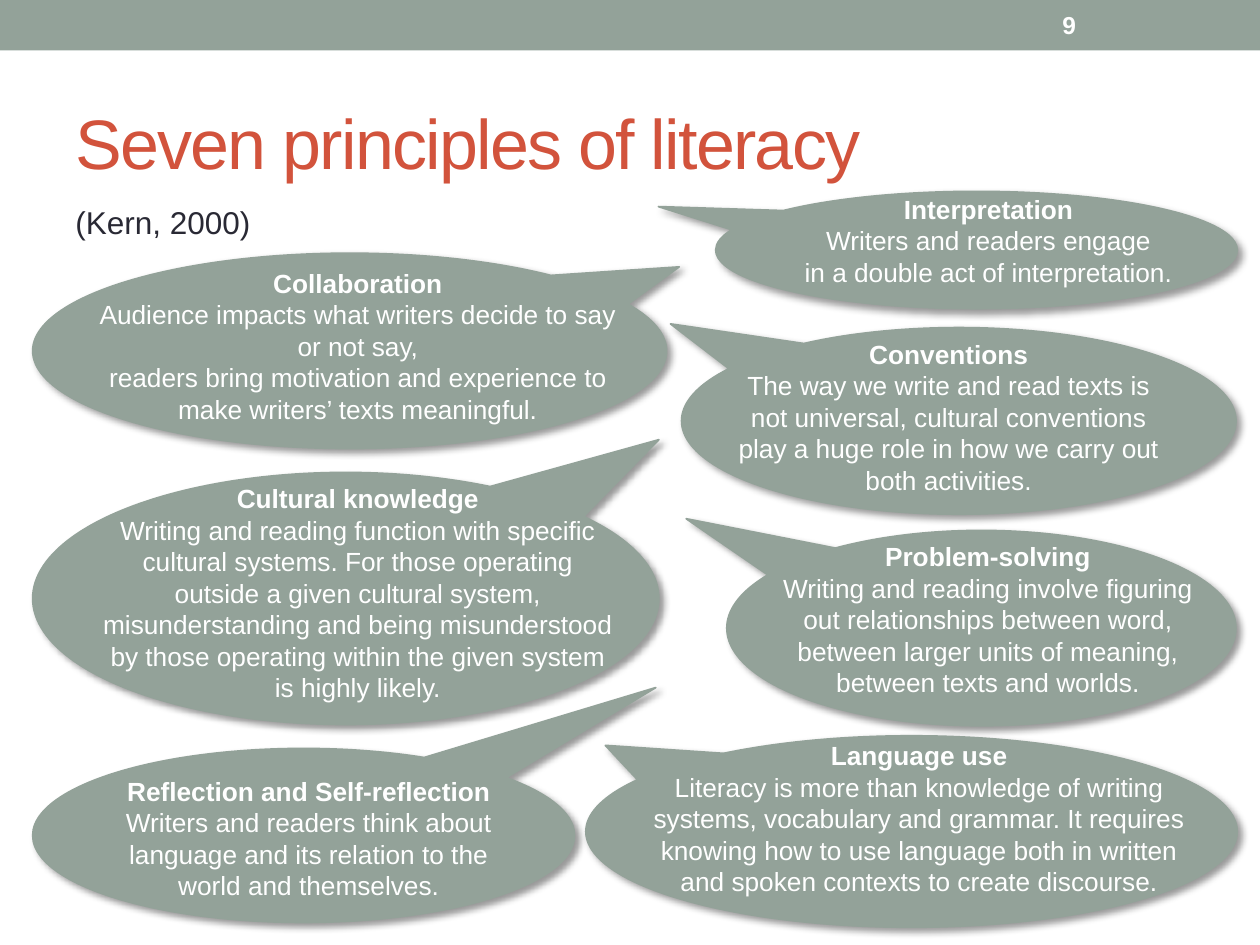
from lxml import etree
from pptx import Presentation
from pptx.dml.color import RGBColor
from pptx.enum.shapes import MSO_SHAPE
from pptx.enum.text import MSO_ANCHOR, PP_ALIGN
from pptx.oxml.ns import qn
from pptx.util import Pt

RECTANGLE = MSO_SHAPE.RECTANGLE
CALLOUT = MSO_SHAPE.OVAL_CALLOUT
TOP, MIDDLE = MSO_ANCHOR.TOP, MSO_ANCHOR.MIDDLE
LEFT, CENTER = PP_ALIGN.LEFT, PP_ALIGN.CENTER
SAGE, RUST, INK, WHITE = "93A299", "D2533C", "292934", "FFFFFF"


def color(value):
    return RGBColor.from_string(value)


class SlideWriter:
    font = "Arial"
    principle_size = 15
    principle_margin = 2.88

    def __init__(self, slide):
        self.slide = slide

    def shape(self, preset, box):
        shape = self.slide.shapes.add_shape(preset, *map(Pt, box))
        shape.shadow.inherit = False
        shape.fill.solid()
        shape.fill.fore_color.rgb = color(SAGE)
        return shape

    def band(self, box):
        self.shape(RECTANGLE, box).line.fill.background()

    def callout(self, box, tip):
        bubble = self.shape(CALLOUT, box)
        bubble.line.color.rgb = color(SAGE)
        bubble.line.width = Pt(1)
        for index, offset in enumerate(tip):
            bubble.adjustments[index] = offset
        self.drop_shadow(bubble)

    def drop_shadow(self, shape):
        effects = shape._element.spPr.find(qn("a:effectLst"))
        shadow = etree.SubElement(
            effects, qn("a:outerShdw"), blurRad=str(Pt(4)), dist=str(Pt(3)),
            dir=str(45 * 60000), algn="tl", rotWithShape="0")
        tint = etree.SubElement(shadow, qn("a:srgbClr"), val="000000")
        etree.SubElement(tint, qn("a:alpha"), val="40000")

    def text_box(self, box, anchor=TOP, wrap=True):
        frame = self.slide.shapes.add_textbox(*map(Pt, box)).text_frame
        frame.word_wrap = wrap
        frame.vertical_anchor = anchor
        return frame

    def run(self, paragraph, words, size, ink, bold=False):
        run = paragraph.add_run()
        run.text = words
        run.font.name = self.font
        run.font.size = Pt(size)
        run.font.bold = bold
        run.font.color.rgb = color(ink)
        return run

    def label(self, box, words, size, ink, bold=False, anchor=TOP,
              wrap=True, spacing=0):
        paragraph = self.text_box(box, anchor, wrap).paragraphs[0]
        paragraph.alignment = LEFT
        run = self.run(paragraph, words, size, ink, bold)
        if spacing:
            run.font._element.set("spc", str(spacing * 100))

    def principle(self, bubble_box, tip, text_area, heading, *statements):
        self.callout(bubble_box, tip)
        frame = self.text_box(text_area)
        frame.margin_left = frame.margin_top = frame.margin_bottom = 0
        frame.margin_right = Pt(self.principle_margin)
        for index, words in enumerate((heading, *statements)):
            paragraph = frame.add_paragraph() if index else frame.paragraphs[0]
            paragraph.alignment = CENTER
            properties = paragraph._p.get_or_add_pPr()
            properties.set("marL", str(Pt(self.principle_margin)))
            properties.set("indent", "0")
            self.run(paragraph, words, self.principle_size, WHITE, index == 0)


PRINCIPLES = [
    ((409, 109.4, 298, 67), (-0.61, -0.37), (450, 110.2, 229.7, 64),
     "Interpretation",
     "Writers and readers engage",
     "in a double act of interpretation."),
    ((18.7, 144.7, 362.2, 111.6), (0.52, -0.43), (53.3, 152.6, 302.4, 103.7),
     "Collaboration",
     "Audience impacts what writers decide to say or not say,",
     "readers bring motivation and experience to make writers’ texts "
     "meaningful."),
    ((389.5, 187.2, 316.8, 106.6), (-0.52, -0.52), (419, 193, 246.2, 94.3),
     "Conventions",
     "The way we write and read texts is not universal, cultural conventions "
     "play a huge role in how we carry out both activities."),
    ((18.7, 270, 357.8, 144), (0.5, -0.63), (53.3, 275.8, 302.4, 135.4),
     "Cultural knowledge",
     "Writing and reading function with specific cultural systems. For those "
     "operating outside a given cultural system, misunderstanding and being "
     "misunderstood by those operating within the given system is highly "
     "likely."),
    ((415.4, 303.1, 290.9, 111.6), (-0.58, -0.56), (441.4, 308.9, 246.2, 95),
     "Problem-solving",
     "Writing and reading involve figuring out relationships between word, "
     "between larger units of meaning, between texts and worlds."),
    ((18.7, 427.7, 309.6, 99.4), (0.65, -0.85), (53.3, 442.8, 246.2, 77.8),
     "Reflection and Self-reflection",
     "Writers and readers think about language and its relation to the world "
     "and themselves."),
    ((334.8, 420.5, 372.2, 109.4), (-0.47, -0.45), (360.7, 422.6, 329, 92.2),
     "Language use",
     "Literacy is more than knowledge of writing systems, vocabulary and "
     "grammar. It requires knowing how to use language both in written and "
     "spoken contexts to create discourse."),
]


def main():
    deck = Presentation()
    deck.slide_width, deck.slide_height = Pt(720), Pt(540)
    writer = SlideWriter(deck.slides.add_slide(deck.slide_layouts[6]))

    writer.band((0, 0, 720, 28.8))
    writer.label((36, 41.8, 648, 77.8), "Seven principles of literacy", 40,
                 RUST, anchor=MIDDLE, spacing=-1)
    writer.label((600, 1.4, 84, 26), "9", 14, WHITE, bold=True, anchor=MIDDLE)
    for principle in PRINCIPLES:
        writer.principle(*principle)
    writer.label((36, 112.3, 116, 28.8), "(Kern, 2000)", 18, INK, wrap=False)

    deck.save("out.pptx")


if __name__ == "__main__":
    main()
